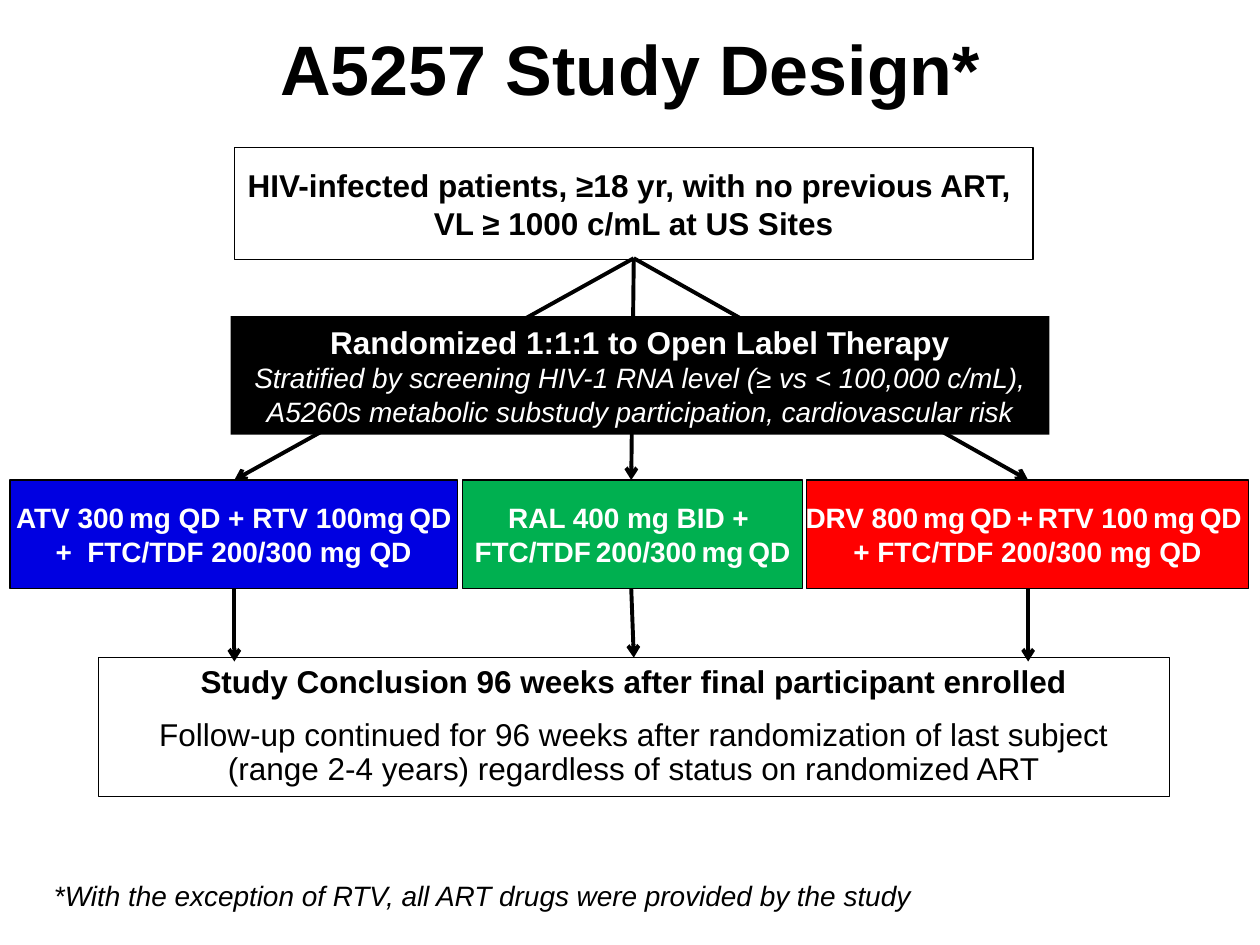
from dataclasses import dataclass

from lxml import etree
from pptx import Presentation
from pptx.dml.color import RGBColor
from pptx.enum.shapes import MSO_CONNECTOR, MSO_SHAPE
from pptx.enum.text import MSO_ANCHOR, PP_ALIGN
from pptx.oxml.ns import qn
from pptx.util import Inches, Pt

RECTANGLE = MSO_SHAPE.RECTANGLE
STRAIGHT = MSO_CONNECTOR.STRAIGHT
MIDDLE, TOP = MSO_ANCHOR.MIDDLE, MSO_ANCHOR.TOP
CENTER, LEFT = PP_ALIGN.CENTER, PP_ALIGN.LEFT


@dataclass(frozen=True)
class Theme:
    font: str = "Arial"
    black: str = "000000"
    white: str = "FFFFFF"
    blue: str = "0000E1"
    green: str = "00B050"
    red: str = "FF0000"
    title: int = 40
    heading: int = 18
    body: int = 16
    narrow_space: int = 10
    border: float = 0.75
    arrow: float = 2.25


THEME = Theme()
NARROW = "_"  # stands for a space set in the narrow size


@dataclass(frozen=True)
class Line:
    text: str
    size: int = THEME.heading
    bold: bool = True
    italic: bool = False


@dataclass(frozen=True)
class Box:
    left: float
    top: float
    width: float
    height: float
    lines: tuple[Line, ...]
    fill: str | None = None
    border: str | None = THEME.black
    color: str = THEME.black
    wrap: bool = True
    spaced: bool = False


def add_run(paragraph, text: str, line: Line, size: int, color: str) -> None:
    run = paragraph.add_run()
    run.text = text
    font = run.font
    font.name, font.size = THEME.font, Pt(size)
    font.bold, font.italic = line.bold, line.italic
    font.color.rgb = RGBColor.from_string(color)


def write_lines(frame, lines: tuple[Line, ...], color: str, align=CENTER,
                anchor=MIDDLE, wrap: bool = True, spaced: bool = False) -> None:
    frame.word_wrap = wrap
    frame.vertical_anchor = anchor
    for index, line in enumerate(lines):
        paragraph = frame.add_paragraph() if index else frame.paragraphs[0]
        paragraph.alignment = align
        if spaced:
            paragraph.line_spacing = 0.9
            paragraph.space_before, paragraph.space_after = Pt(6), Pt(4.5)
        for position, piece in enumerate(line.text.split(NARROW)):
            if position:
                add_run(paragraph, " ", line, THEME.narrow_space, color)
            add_run(paragraph, piece, line, line.size, color)


def add_box(slide, box: Box) -> None:
    shape = slide.shapes.add_shape(RECTANGLE, Inches(box.left), Inches(box.top),
                                   Inches(box.width), Inches(box.height))
    shape.shadow.inherit = False
    if box.fill:
        shape.fill.solid()
        shape.fill.fore_color.rgb = RGBColor.from_string(box.fill)
    else:
        shape.fill.background()
    if box.border:
        shape.line.color.rgb = RGBColor.from_string(box.border)
        shape.line.width = Pt(THEME.border)
    else:
        shape.line.fill.background()
    write_lines(shape.text_frame, box.lines, box.color, wrap=box.wrap, spaced=box.spaced)


def add_label(slide, left: float, top: float, width: float, height: float,
              line: Line, align, anchor) -> None:
    label = slide.shapes.add_textbox(Inches(left), Inches(top), Inches(width), Inches(height))
    write_lines(label.text_frame, (line,), THEME.black, align, anchor)


def add_arrow(slide, start: tuple[float, float], end: tuple[float, float]) -> None:
    connector = slide.shapes.add_connector(STRAIGHT, *map(Inches, start + end))
    connector.line.color.rgb = RGBColor.from_string(THEME.black)
    connector.line.width = Pt(THEME.arrow)
    etree.SubElement(connector.line._get_or_add_ln(), qn("a:tailEnd"), type="arrow")
    etree.SubElement(connector._element.spPr, qn("a:effectLst"))


# Flow geometry
ARM_TOP, ARM_HEIGHT = 3.81, 0.86
ARM_BOTTOM = ARM_TOP + ARM_HEIGHT
ENTRY_POINT = (5.03, 2.05)
ARM_CENTERS = (1.86, 5.01, 8.16)
CONCLUSION_POINTS = ((1.86, 5.25), (5.03, 5.22), (8.16, 5.25))

# Treatment arms: left, width, fill, text lines
ARMS = (
    (0.08, 3.55, THEME.blue,
     ("ATV 300_mg QD + RTV 100mg_QD", "+  FTC/TDF 200/300 mg QD")),
    (3.67, 2.7, THEME.green,
     ("RAL 400 mg BID + ", "FTC/TDF_200/300_mg_QD")),
    (6.4, 3.51, THEME.red,
     ("DRV 800_mg_QD_+_RTV 100_mg_QD ", "+ FTC/TDF 200/300 mg QD")),
)

ENTRY = Box(1.86, 1.17, 6.34, 0.89, (
    Line("HIV-infected patients, ≥18 yr, with no previous ART, "),
    Line("VL ≥ 1000 c/mL at US Sites"),
))
RANDOMIZATION = Box(1.83, 2.51, 6.5, 0.94, (
    Line("Randomized 1:1:1 to Open Label Therapy"),
    Line("Stratified by screening HIV-1 RNA level (≥ vs < 100,000 c/mL), "
         "A5260s metabolic substudy participation, cardiovascular risk",
         THEME.body, bold=False, italic=True),
), fill=THEME.black, border=None, color=THEME.white)
CONCLUSION = Box(0.78, 5.22, 8.5, 1.1, (
    Line("Study Conclusion 96 weeks after final participant enrolled"),
    Line("Follow-up continued for 96 weeks after randomization of last subject "
         "(range 2-4 years) regardless of status on randomized ART", bold=False),
), spaced=True)


def main() -> None:
    presentation = Presentation()
    presentation.slide_width, presentation.slide_height = Inches(10), Inches(7.5)
    slide = presentation.slides.add_slide(presentation.slide_layouts[6])

    # Title
    add_label(slide, 0.5, 0.17, 9, 0.73,
              Line("A5257 Study Design*", THEME.title), CENTER, MIDDLE)

    # Treatment arms, conclusion and entry criteria
    for left, width, fill, texts in ARMS:
        lines = tuple(Line(text, THEME.body) for text in texts)
        add_box(slide, Box(left, ARM_TOP, width, ARM_HEIGHT, lines, fill,
                           color=THEME.white, wrap=False))
    add_box(slide, CONCLUSION)
    add_box(slide, ENTRY)

    # Arrows to the arms pass behind the randomization box
    for center in ARM_CENTERS:
        add_arrow(slide, ENTRY_POINT, (center, ARM_TOP))
    add_box(slide, RANDOMIZATION)

    # Arrows from the arms to the conclusion
    for center, target in zip(ARM_CENTERS, CONCLUSION_POINTS):
        add_arrow(slide, (center, ARM_BOTTOM), target)

    # Footnote
    add_label(slide, 0.33, 6.92, 7.33, 0.37,
              Line("*With the exception of RTV, all ART drugs were provided by the study",
                   THEME.body, bold=False, italic=True), LEFT, TOP)

    presentation.save("out.pptx")


if __name__ == "__main__":
    main()
